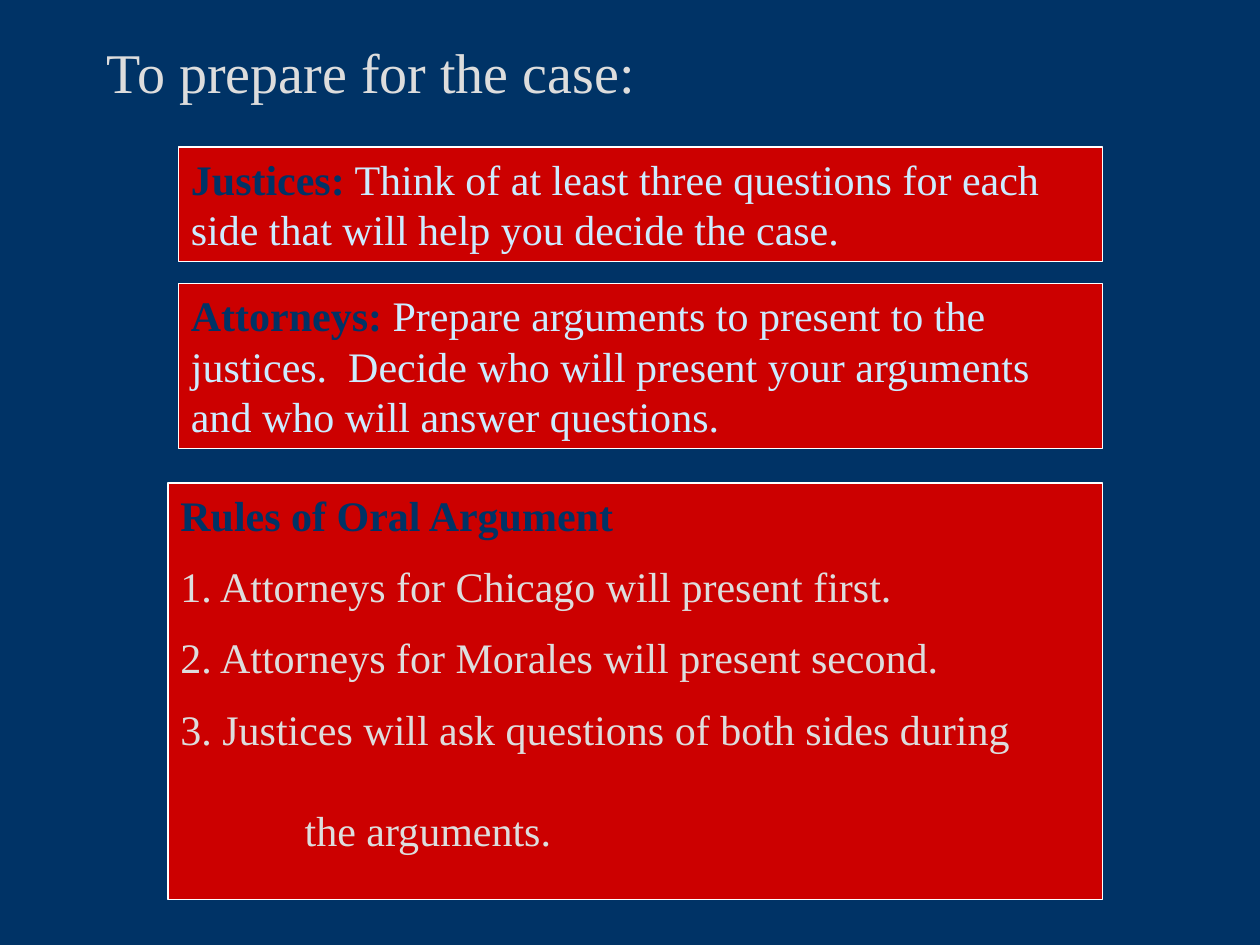
from pptx import Presentation
from pptx.util import Pt
from pptx.dml.color import RGBColor as Rgb
from pptx.enum.shapes import MSO_SHAPE as Geo
from pptx.enum.text import MSO_ANCHOR as Anchor, PP_ALIGN as Align

FONT = "Times New Roman"
NAVY, RED, WHITE = "003366", "CC0000", "FFFFFF"
GREY, ICE = "DDDDDD", "CCECFF"
HEAD = {"size": Pt(24), "bold": True}
BODY = {"size": Pt(24), "bold": False}


def color(code):
    return Rgb.from_string(code)


def add_run(para, text, code, form):
    run = para.add_run()
    run.text = text
    run.font.name = FONT
    run.font.color.rgb = color(code)
    for key, val in form.items():
        setattr(run.font, key, val)


def set_frame(shape):
    frame = shape.text_frame
    form = {"word_wrap": True, "vertical_anchor": Anchor.TOP,
            "margin_left": Pt(7.2), "margin_right": Pt(7.2),
            "margin_top": Pt(3.6), "margin_bottom": Pt(3.6)}
    for key, val in form.items():
        setattr(frame, key, val)
    return frame


def add_title(slide, text):
    box = slide.shapes.add_textbox(Pt(54), Pt(18), Pt(576), Pt(45))
    para = set_frame(box).paragraphs[0]
    add_run(para, text, GREY, {"size": Pt(32)})


def add_panel(slide, left, top, width, height):
    box = slide.shapes.add_shape(Geo.RECTANGLE, Pt(left), Pt(top),
                                 Pt(width), Pt(height))
    box.shadow.inherit = False
    box.fill.solid()
    box.fill.fore_color.rgb = color(RED)
    box.line.color.rgb = color(WHITE)
    box.line.width = Pt(0.75)
    frame = set_frame(box)
    frame.paragraphs[0].alignment = Align.LEFT
    return frame


def add_task(slide, top, height, role, task):
    para = add_panel(slide, 102, top, 528, height).paragraphs[0]
    add_run(para, role, NAVY, HEAD)
    add_run(para, " " + task, ICE, BODY)


def add_rules(slide, head, rules, tail):
    frame = add_panel(slide, 96, 276, 534, 238)
    add_run(frame.paragraphs[0], head, NAVY, HEAD)
    # The tail of the last rule sits lower and further in
    gaps = [12] * len(rules) + [29]
    for text, gap in zip(rules + [tail], gaps):
        para = frame.add_paragraph()
        para.alignment = Align.LEFT
        para.space_before = Pt(gap)
        add_run(para, text, GREY, BODY)
    para._p.get_or_add_pPr().set("marL", str(Pt(71)))


def main():
    deck = Presentation()
    deck.slide_width, deck.slide_height = Pt(720), Pt(540)
    slide = deck.slides.add_slide(deck.slide_layouts[6])
    slide.background.fill.solid()
    slide.background.fill.fore_color.rgb = color(NAVY)

    add_title(slide, "To prepare for the case:")

    # Tasks for each role
    add_task(slide, 84, 65.5, "Justices:",
             "Think of at least three questions for each side that will "
             "help you decide the case.")
    add_task(slide, 162, 94.5, "Attorneys:",
             "Prepare arguments to present to the justices.  Decide who "
             "will present your arguments and who will answer questions.")

    # Rules of the hearing
    add_rules(slide, "Rules of Oral Argument",
              ["1. Attorneys for Chicago will present first.",
               "2. Attorneys for Morales will present second.",
               "3. Justices will ask questions of both sides during"],
              "the arguments.")

    deck.save("out.pptx")


if __name__ == "__main__":
    main()
